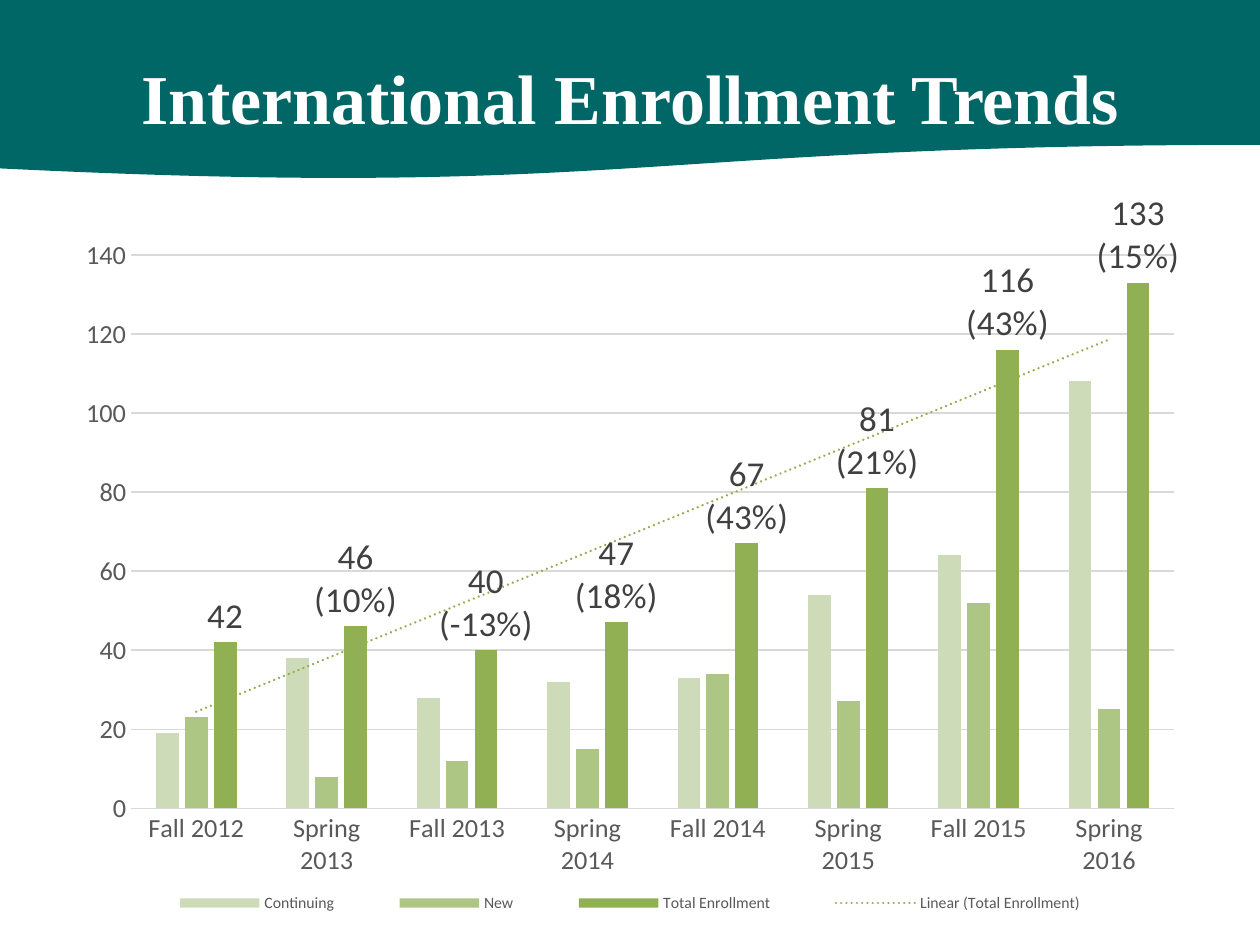
from lxml import etree
from pptx import Presentation
from pptx.chart.data import CategoryChartData as Data
from pptx.dml.color import RGBColor
from pptx.enum.chart import XL_CHART_TYPE as Kind
from pptx.enum.chart import XL_LABEL_POSITION as Spot
from pptx.enum.chart import XL_LEGEND_POSITION as Side
from pptx.enum.chart import XL_TICK_MARK as Tick
from pptx.enum.shapes import MSO_SHAPE as Form
from pptx.enum.text import MSO_ANCHOR as Anchor
from pptx.enum.text import PP_ALIGN as Align
from pptx.oxml import parse_xml
from pptx.util import Pt

TEAL = RGBColor(0x00, 0x66, 0x66)
WHITE = RGBColor(0xFF, 0xFF, 0xFF)
BLACK = RGBColor(0x00, 0x00, 0x00)
PALE = RGBColor(0xCD, 0xDB, 0xB8)
MID = RGBColor(0xAE, 0xC6, 0x83)
GREEN = RGBColor(0x91, 0xAF, 0x53)
RULE = RGBColor(0xD9, 0xD9, 0xD9)
GREY = RGBColor(0x59, 0x59, 0x59)
DARK = RGBColor(0x40, 0x40, 0x40)

SPACES = (
    'xmlns:c="http://schemas.openxmlformats.org/drawingml/2006/chart" '
    'xmlns:a="http://schemas.openxmlformats.org/drawingml/2006/main"'
)
TERMS = ["Fall 2012", "Spring 2013", "Fall 2013", "Spring 2014",
         "Fall 2014", "Spring 2015", "Fall 2015", "Spring 2016"]
SERIES = [
    ("Continuing", [19, 38, 28, 32, 33, 54, 64, 108], PALE),
    ("New", [23, 8, 12, 15, 34, 27, 52, 25], MID),
    ("Total Enrollment", [42, 46, 40, 47, 67, 81, 116, 133], GREEN),
]
GROWTH = ["", "(10%)", "(-13%)", "(18%)", "(43%)", "(21%)", "(43%)", "(15%)"]


def style(font, size, color, name="Calibri"):
    font.size = Pt(size)
    font.color.rgb = color
    font.name = name


def layout(x, y, w, h, target=""):
    """Return a manual chart layout, in fractions of the chart."""
    return parse_xml(
        f'<c:layout {SPACES}><c:manualLayout>{target}'
        '<c:xMode val="edge"/><c:yMode val="edge"/>'
        f'<c:x val="{x}"/><c:y val="{y}"/><c:w val="{w}"/><c:h val="{h}"/>'
        '</c:manualLayout></c:layout>')


deck = Presentation()
deck.slide_width, deck.slide_height = Pt(720), Pt(540)
slide = deck.slides.add_slide(deck.slide_layouts[6])

# Banner and title
band = slide.shapes.add_shape(Form.FLOWCHART_DOCUMENT, 0, 0, Pt(720), Pt(102))
band.shadow.inherit = False
band.fill.solid()
band.fill.fore_color.rgb = TEAL
band.line.color.rgb = TEAL
band.line.width = Pt(2)

title = slide.shapes.add_textbox(Pt(36), Pt(24), Pt(648), Pt(62))
frame = title.text_frame
frame.word_wrap = True
frame.vertical_anchor = Anchor.MIDDLE
frame.margin_left = frame.margin_right = Pt(3)
frame.margin_top = frame.margin_bottom = Pt(3)
para = frame.paragraphs[0]
para.alignment = Align.CENTER
run = para.add_run()
run.text = "International Enrollment Trends"
run.font.bold = True
style(run.font, 40, WHITE, "Times New Roman")

# Enrollment chart
data = Data()
data.categories = TERMS
for name, counts, color in SERIES:
    data.add_series(name, counts)
chart = slide.shapes.add_chart(
    Kind.COLUMN_CLUSTERED, Pt(36), Pt(109.5), Pt(648), Pt(419), data).chart
chart.has_title = False
style(chart.font, 10, BLACK)
plot = chart.plots[0]
plot.vary_by_categories = False
plot.gap_width = 219
plot.overlap = -27
for bars, (name, counts, color) in zip(plot.series, SERIES):
    bars.format.fill.solid()
    bars.format.fill.fore_color.rgb = color

for axis in (chart.category_axis, chart.value_axis):
    axis.major_tick_mark = axis.minor_tick_mark = Tick.NONE
    style(axis.tick_labels.font, 15, GREY)
line = chart.category_axis.format.line
line.color.rgb = RULE
line.width = Pt(0.75)
scale = chart.value_axis
scale.minimum_scale, scale.maximum_scale, scale.major_unit = 0, 140, 20
scale.format.line.fill.background()
scale.major_gridlines.format.line.color.rgb = RULE
scale.major_gridlines.format.line.width = Pt(0.75)

# Totals with growth over the previous term
total = plot.series[2]
labels = total.data_labels
labels.show_value = True
labels.position = Spot.OUTSIDE_END
style(labels.font, 20, DARK)
for spot, (count, growth) in enumerate(zip(SERIES[2][1], GROWTH)):
    if not growth:
        continue
    label = total.points[spot].data_label
    text = label.text_frame
    for para, words in ((text.paragraphs[0], str(count)),
                        (text.add_paragraph(), growth)):
        run = para.add_run()
        run.text = words
        style(run.font, 20, DARK)
    label.position = Spot.OUTSIDE_END

# Linear trend of the totals
trend = parse_xml(
    f'<c:trendline {SPACES}><c:spPr><a:ln w="{Pt(1.5)}" cap="rnd">'
    f'<a:solidFill><a:srgbClr val="{GREEN}"/></a:solidFill>'
    '<a:prstDash val="sysDot"/></a:ln></c:spPr>'
    '<c:trendlineType val="linear"/><c:dispRSqr val="0"/>'
    '<c:dispEq val="0"/></c:trendline>')
total._element.cat.addprevious(trend)

# Legend and plot placement
chart.has_legend = True
legend = chart.legend
legend.position = Side.BOTTOM
legend.include_in_layout = False
style(legend.font, 9, GREY)
for old in legend._element.xpath("c:layout"):
    legend._element.remove(old)
legend._element.xpath("c:legendPos")[0].addnext(layout(0.05, 0.94, 0.9, 0.06))
area = chart._chartSpace.chart.plotArea
for old in area.xpath("c:layout"):
    area.remove(old)
area.insert(0, layout(0.06, 0.08, 0.92, 0.76,
                      '<c:layoutTarget val="inner"/>'))

deck.save("out.pptx")
